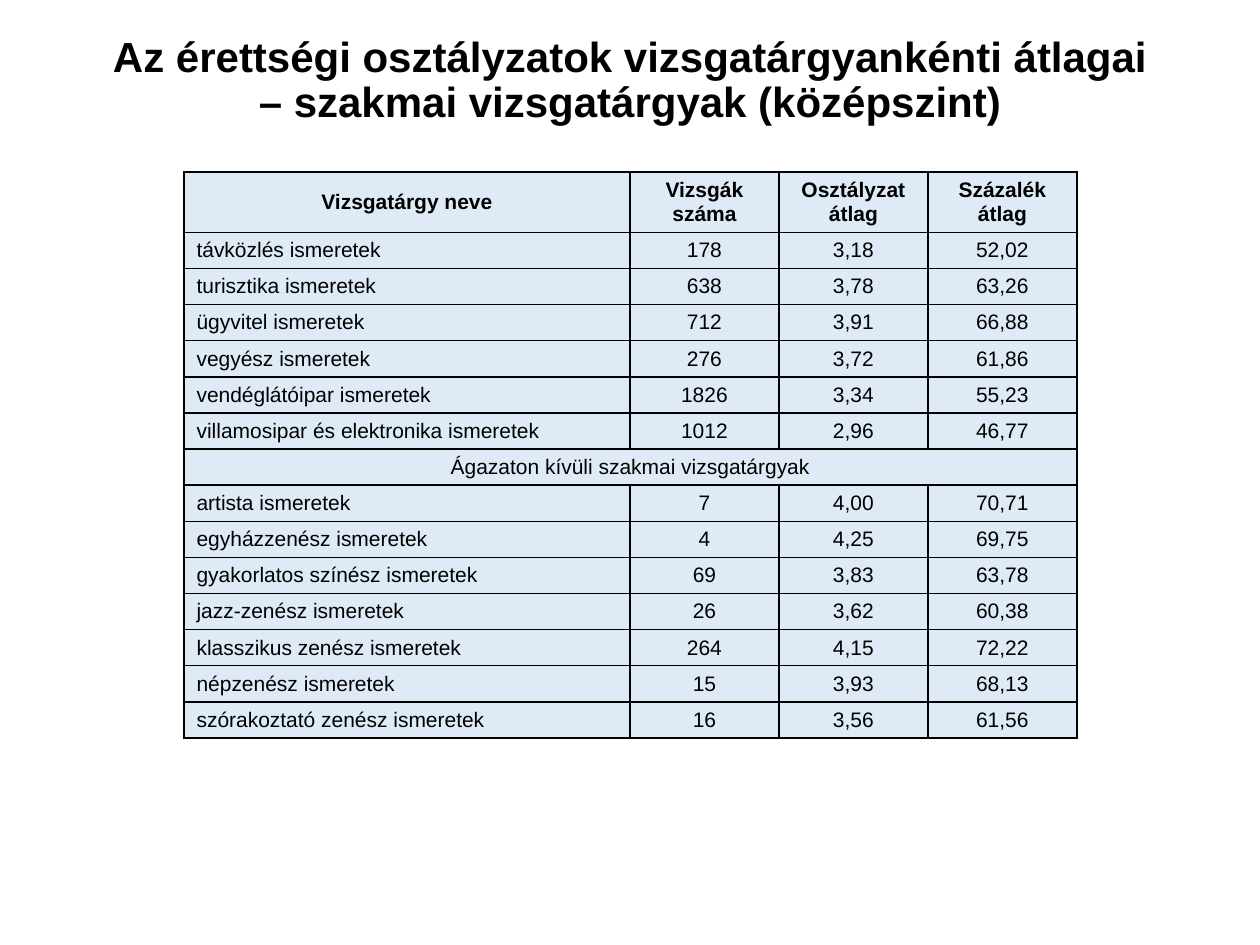
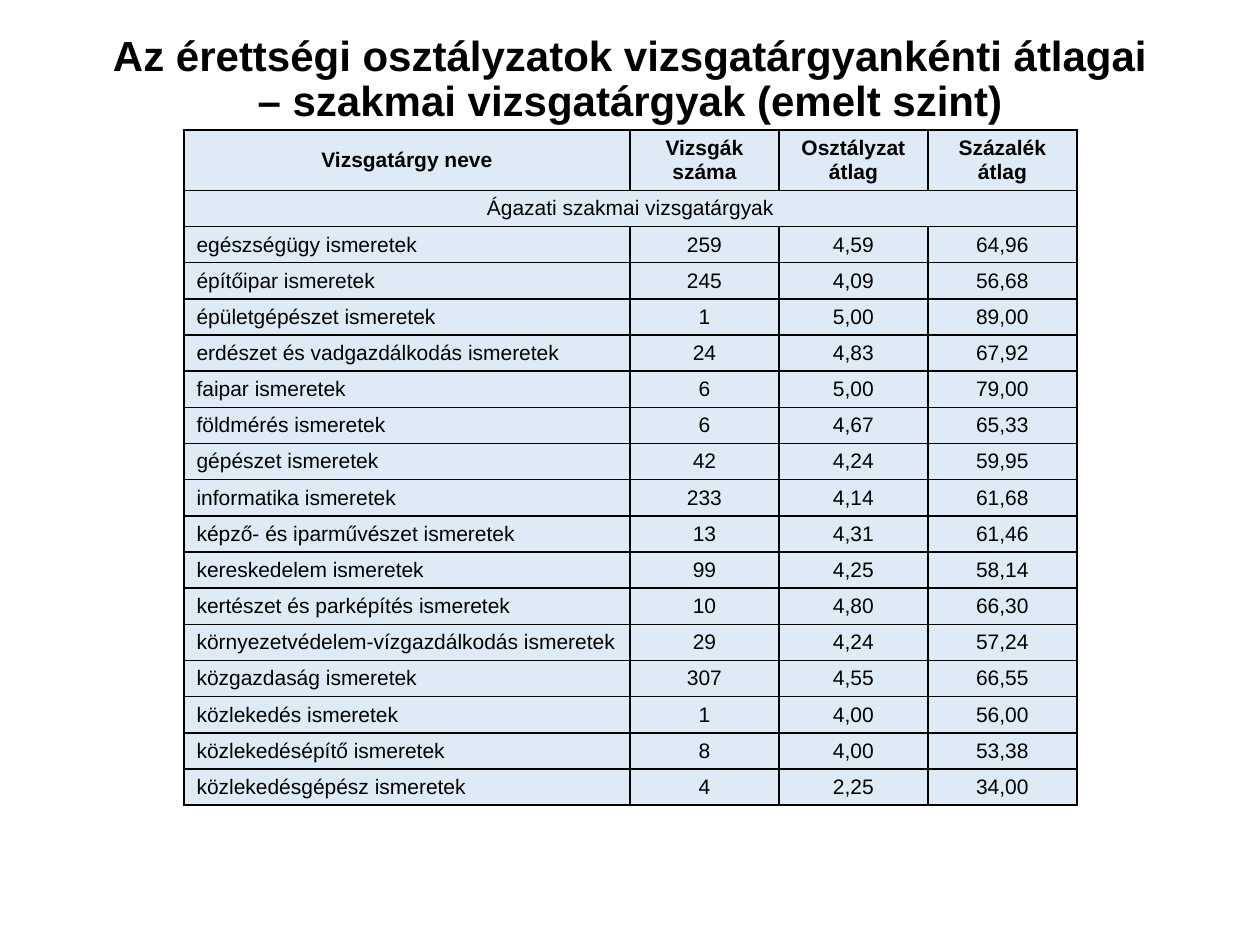
from lxml.etree import SubElement
from pptx import Presentation
from pptx.dml.color import RGBColor
from pptx.enum.text import MSO_ANCHOR, PP_ALIGN
from pptx.oxml.ns import qn
from pptx.util import Pt

PX = 914400 // 126
FONT = "Arial"
BLACK = "000000"
PALE_BLUE = "DEEBF7"

TITLE_START = "Az érettségi osztályzatok vizsgatárgyankénti átlagai – szakmai vizsgatárgyak"
HEADER = ("Vizsgatárgy neve", "Vizsgák száma", "Osztályzat átlag", "Százalék átlag")
COLUMN_WIDTHS = (446, 149, 149, 149)
TABLE_LEFT = 184
HEADER_HEIGHT = 60
CELL_MARGIN = 5

INTERMEDIATE_ROWS = [
    ("távközlés ismeretek", "178", "3,18", "52,02"),
    ("turisztika ismeretek", "638", "3,78", "63,26"),
    ("ügyvitel ismeretek", "712", "3,91", "66,88"),
    ("vegyész ismeretek", "276", "3,72", "61,86"),
    ("vendéglátóipar ismeretek", "1826", "3,34", "55,23"),
    ("villamosipar és elektronika ismeretek", "1012", "2,96", "46,77"),
    ("Ágazaton kívüli szakmai vizsgatárgyak",),
    ("artista ismeretek", "7", "4,00", "70,71"),
    ("egyházzenész ismeretek", "4", "4,25", "69,75"),
    ("gyakorlatos színész ismeretek", "69", "3,83", "63,78"),
    ("jazz-zenész ismeretek", "26", "3,62", "60,38"),
    ("klasszikus zenész ismeretek", "264", "4,15", "72,22"),
    ("népzenész ismeretek", "15", "3,93", "68,13"),
    ("szórakoztató zenész ismeretek", "16", "3,56", "61,56"),
]

ADVANCED_ROWS = [
    ("Ágazati szakmai vizsgatárgyak",),
    ("egészségügy ismeretek", "259", "4,59", "64,96"),
    ("építőipar ismeretek", "245", "4,09", "56,68"),
    ("épületgépészet ismeretek", "1", "5,00", "89,00"),
    ("erdészet és vadgazdálkodás ismeretek", "24", "4,83", "67,92"),
    ("faipar ismeretek", "6", "5,00", "79,00"),
    ("földmérés ismeretek", "6", "4,67", "65,33"),
    ("gépészet ismeretek", "42", "4,24", "59,95"),
    ("informatika ismeretek", "233", "4,14", "61,68"),
    ("képző- és iparművészet ismeretek", "13", "4,31", "61,46"),
    ("kereskedelem ismeretek", "99", "4,25", "58,14"),
    ("kertészet és parképítés ismeretek", "10", "4,80", "66,30"),
    ("környezetvédelem-vízgazdálkodás ismeretek", "29", "4,24", "57,24"),
    ("közgazdaság ismeretek", "307", "4,55", "66,55"),
    ("közlekedés ismeretek", "1", "4,00", "56,00"),
    ("közlekedésépítő ismeretek", "8", "4,00", "53,38"),
    ("közlekedésgépész ismeretek", "4", "2,25", "34,00"),
]

PAGES = [
    {"level": "(középszint)", "title_top": -10, "table_top": 172, "table_bottom": 738,
     "rows": INTERMEDIATE_ROWS},
    {"level": "(emelt szint)", "title_top": -11, "table_top": 130, "table_bottom": 805,
     "rows": ADVANCED_ROWS},
]


def color(value):
    return RGBColor.from_string(value)


def write(frame, text, size, bold, alignment):
    para = frame.paragraphs[0]
    para.alignment = alignment
    span = para.add_run()
    span.text = text
    span.font.name = FONT
    span.font.size = Pt(size)
    span.font.bold = bold
    span.font.color.rgb = color(BLACK)
    return para


def add_title(page, level, top):
    box = page.shapes.add_textbox(87 * PX, top * PX, 1086 * PX, 183 * PX)
    frame = box.text_frame
    frame.word_wrap = True
    frame.vertical_anchor = MSO_ANCHOR.MIDDLE
    para = write(frame, f"{TITLE_START} {level}", 24, True, PP_ALIGN.CENTER)
    para.line_spacing = 0.9


def style_cell(cell):
    properties = cell._tc.get_or_add_tcPr()
    for side in ("a:lnL", "a:lnR", "a:lnT", "a:lnB"):
        line = SubElement(properties, qn(side), w=str(Pt(1)))
        fill = SubElement(line, qn("a:solidFill"))
        SubElement(fill, qn("a:srgbClr"), val=BLACK)
    cell.fill.solid()
    cell.fill.fore_color.rgb = color(PALE_BLUE)
    cell.vertical_anchor = MSO_ANCHOR.MIDDLE
    cell.margin_top = cell.margin_bottom = CELL_MARGIN * PX


def add_results(page, top, bottom, subjects):
    rows = [HEADER] + subjects
    row_height = (bottom - top - HEADER_HEIGHT) * PX // len(subjects)
    heights = [HEADER_HEIGHT * PX] + [row_height] * len(subjects)
    table = page.shapes.add_table(
        len(rows), len(HEADER), TABLE_LEFT * PX, top * PX,
        sum(COLUMN_WIDTHS) * PX, sum(heights),
    ).table
    table.first_row = False
    table.horz_banding = False
    for column, width in zip(table.columns, COLUMN_WIDTHS):
        column.width = width * PX
    for index, (values, height) in enumerate(zip(rows, heights)):
        table.rows[index].height = height
        for cell in table.rows[index].cells:
            style_cell(cell)
        is_section = len(values) == 1
        if is_section:
            table.cell(index, 0).merge(table.cell(index, len(HEADER) - 1))
        for position, value in enumerate(values):
            is_name = position == 0 and index > 0 and not is_section
            alignment = PP_ALIGN.LEFT if is_name else PP_ALIGN.CENTER
            write(table.cell(index, position).text_frame, value, 12, index == 0, alignment)


def main():
    deck = Presentation()
    deck.slide_width = 1260 * PX
    deck.slide_height = 945 * PX
    for content in PAGES:
        page = deck.slides.add_slide(deck.slide_layouts[6])
        add_title(page, content["level"], content["title_top"])
        add_results(page, content["table_top"], content["table_bottom"], content["rows"])
    deck.save("out.pptx")


if __name__ == "__main__":
    main()
